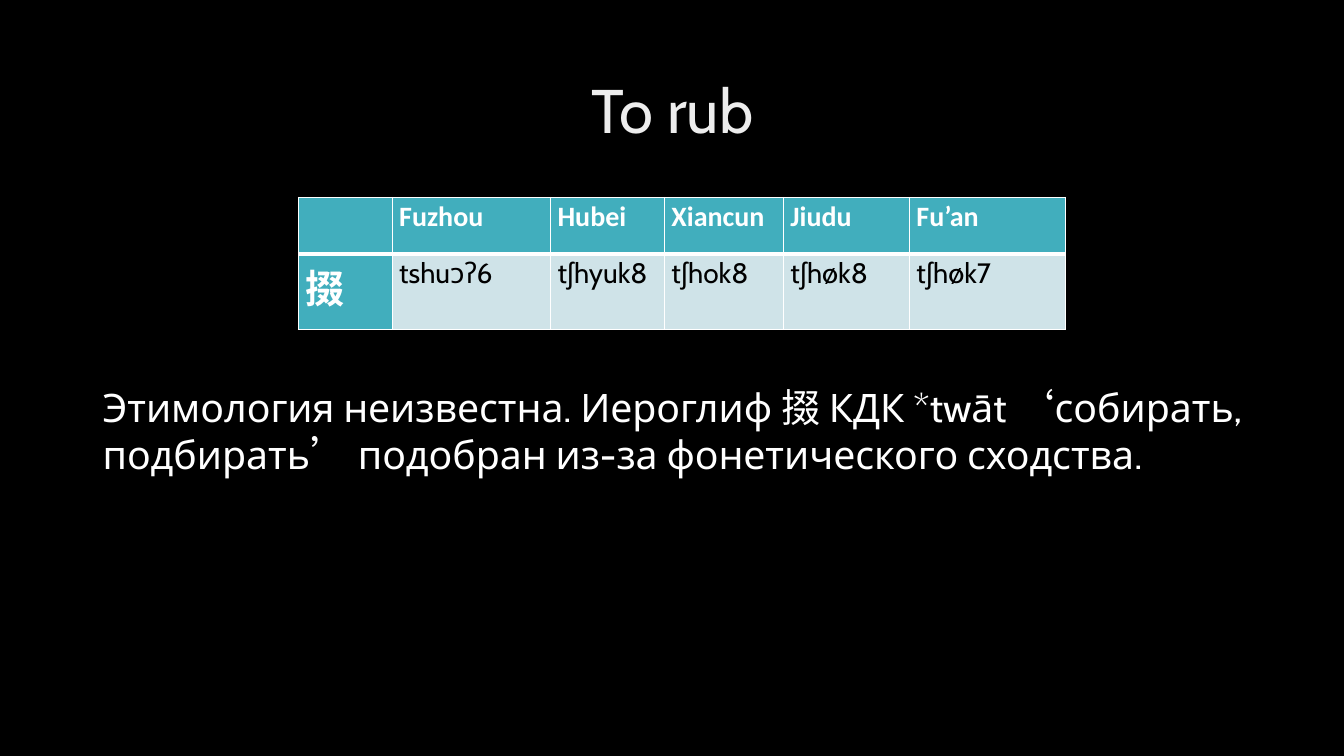
from dataclasses import dataclass

from lxml.etree import SubElement
from pptx import Presentation
from pptx.dml.color import RGBColor
from pptx.enum.text import MSO_ANCHOR, PP_ALIGN
from pptx.oxml.ns import qn
from pptx.util import Inches, Pt


@dataclass(frozen=True)
class Theme:
    background: str = "000000"
    title: str = "EDEDED"
    light: str = "FFFFFF"
    dark: str = "000000"
    header: str = "41AEBD"
    body: str = "CFE3E8"
    title_size: int = 44
    text_size: int = 28
    cell_size: int = 20
    text_font: str = "Cabin"
    cell_font: str = "Calibri"
    thin: int = 1
    thick: int = 3


def apply(target, values):
    for name, value in values.items():
        setattr(target, name, value)


class SlideBuilder:
    """Places elements by percent of the slide's width and height."""

    def __init__(self, deck, theme):
        self.deck, self.theme = deck, theme
        self.slide = deck.slides.add_slide(deck.slide_layouts[5])
        fill = self.slide.background.fill
        fill.solid()
        fill.fore_color.rgb = RGBColor.from_string(theme.background)

    def across(self, percent):
        return round(self.deck.slide_width * percent / 100)

    def down(self, percent):
        return round(self.deck.slide_height * percent / 100)

    def area(self, left, top, width, height):
        return self.across(left), self.down(top), self.across(width), self.down(height)

    def add_words(self, frame, text, size, color, font, bold=False, **layout):
        paragraph = frame.paragraphs[0]
        apply(paragraph, layout)
        run = paragraph.add_run()
        run.text = text
        apply(run.font, {"name": font, "size": Pt(size), "bold": bold})
        run.font.color.rgb = RGBColor.from_string(color)

    def title(self, text, area):
        heading = self.slide.shapes.title
        apply(heading, dict(zip(("left", "top", "width", "height"), self.area(*area))))
        apply(heading.text_frame, {"vertical_anchor": MSO_ANCHOR.MIDDLE, "word_wrap": True})
        self.add_words(heading.text_frame, text, self.theme.title_size, self.theme.title,
                       self.theme.text_font, alignment=PP_ALIGN.CENTER, line_spacing=0.9)

    def text(self, text, area):
        note = self.slide.shapes.add_textbox(*self.area(*area))
        note.text_frame.word_wrap = True
        self.add_words(note.text_frame, text, self.theme.text_size, self.theme.light,
                       self.theme.text_font)

    def border(self, cell, side, width):
        line = SubElement(cell._tc.get_or_add_tcPr(), qn(f"a:ln{side}"), w=str(Pt(width)))
        fill = SubElement(line, qn("a:solidFill"))
        SubElement(fill, qn("a:srgbClr"), val=self.theme.light)

    def cell(self, cell, text, row, column):
        theme = self.theme
        is_header, is_label = row == 0, column == 0
        apply(cell, {"margin_left": Inches(0.07), "margin_right": Inches(0.07),
                     "margin_top": 0, "margin_bottom": 0})
        # Borders come before the fill in the cell's properties
        for side in "LRTB":
            divider = side == ("B" if is_header else "T")
            self.border(cell, side, theme.thick if divider else theme.thin)
        cell.fill.solid()
        strong = is_header or is_label
        cell.fill.fore_color.rgb = RGBColor.from_string(theme.header if strong else theme.body)
        if text:
            self.add_words(cell.text_frame, text,
                           theme.text_size if is_label else theme.cell_size,
                           theme.light if strong else theme.dark,
                           theme.cell_font if is_header else theme.text_font,
                           bold=strong, line_spacing=1.07)

    def table(self, records, left, top, widths, heights):
        table = self.slide.shapes.add_table(
            len(heights), len(widths),
            *self.area(left, top, sum(widths), sum(heights))).table
        for column, width in zip(table.columns, widths):
            column.width = self.across(width)
        for row, height in zip(table.rows, heights):
            row.height = self.down(height)
        for row, record in enumerate(records):
            for column, text in enumerate(record):
                self.cell(table.cell(row, column), text, row, column)


def main():
    deck = Presentation()
    apply(deck, {"slide_width": Inches(13.33), "slide_height": Inches(7.5)})
    builder = SlideBuilder(deck, Theme())

    # Heading
    builder.title("To rub", (6.9, 5.33, 86.27, 19.33))

    # Dialect forms
    dialect_forms = [
        ("", "Fuzhou", "Hubei", "Xiancun", "Jiudu", "Fu’an"),
        ("掇", "tshuᴐʔ6", "tʃhyuk8", "tʃhok8", "tʃhøk8", "tʃhøk7"),
    ]
    builder.table(dialect_forms, 22.2, 26.13,
                  widths=(6.98, 11.78, 8.48, 8.85, 9.38, 11.63), heights=(7.47, 10))

    # Etymology
    builder.text("Этимология неизвестна. Иероглиф 掇 КДК *twāt ‘собирать, подбирать’ "
                 "подобран из-за фонетического сходства.", (6.9, 50, 89.5, 20.13))

    deck.save("out.pptx")


if __name__ == "__main__":
    main()
